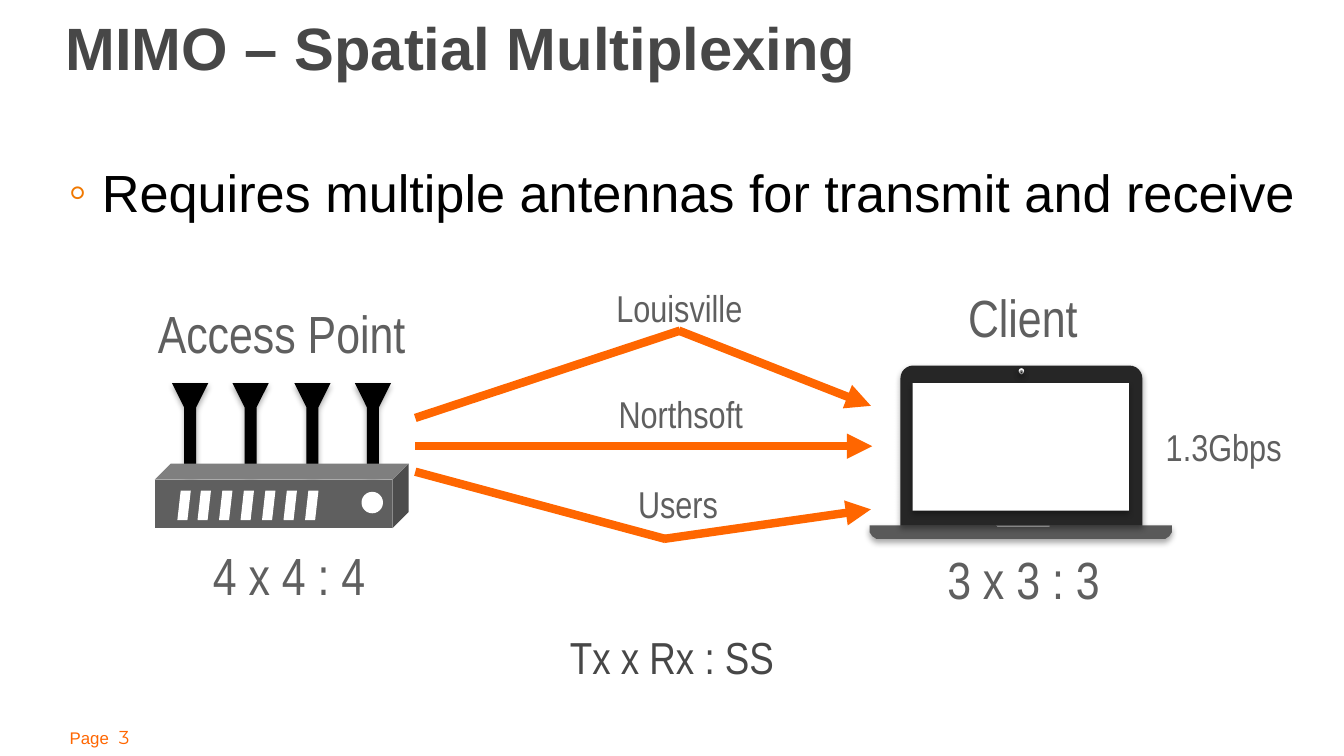
"""Build the MIMO spatial multiplexing slide."""
from lxml import etree
from pptx import Presentation
from pptx.dml.color import RGBColor
from pptx.enum.shapes import MSO_CONNECTOR, MSO_SHAPE
from pptx.enum.text import PP_ALIGN
from pptx.oxml.ns import qn
from pptx.util import Pt

PX = 9144
STRAIGHT = MSO_CONNECTOR.STRAIGHT
RECTANGLE, ELLIPSE = MSO_SHAPE.RECTANGLE, MSO_SHAPE.OVAL
CUBE, PARALLELOGRAM = MSO_SHAPE.CUBE, MSO_SHAPE.PARALLELOGRAM
ROUNDED_TOP = MSO_SHAPE.ROUND_2_SAME_RECTANGLE
LEFT, CENTER = PP_ALIGN.LEFT, PP_ALIGN.CENTER
COLORS = {
    "title": "474747", "label": "5F5F5F", "orange": "FF6600", "bullet": "F07800",
    "black": "000000", "white": "FFFFFF", "lid": "262626", "base": "595959", "ring": "808080",
}
COLORS = {name: RGBColor.from_string(value) for name, value in COLORS.items()}

deck = Presentation()
deck.slide_width = 1000 * PX
deck.slide_height = deck.slide_width * 9 // 16
slide = deck.slides.add_slide(deck.slide_layouts[6])
shapes = slide.shapes


def paint(shape, color, shadow=False):
    shape.fill.solid()
    shape.fill.fore_color.rgb = COLORS[color]
    shape.line.fill.background()
    shape.shadow.inherit = False
    if shadow:
        effects = shape._element.spPr.find(qn("a:effectLst"))
        outer = etree.SubElement(effects, qn("a:outerShdw"), blurRad="40000", dist="23000",
                                 dir="5400000", rotWithShape="0")
        tint = etree.SubElement(outer, qn("a:srgbClr"), val="000000")
        etree.SubElement(tint, qn("a:alpha"), val="35000")


def write(text, left, top, width, height, size, color, font="Arial Narrow", align=CENTER):
    box = shapes.add_textbox(left * PX, top * PX, width * PX, height * PX)
    box.text_frame.word_wrap = True
    para = box.text_frame.paragraphs[0]
    para.text = text
    para.alignment = align
    para.font.size = Pt(size)
    para.font.name = font
    para.font.color.rgb = COLORS[color]
    return para


page = write("Page", 42, 535, 76, 27, 9, "orange", "Arial", LEFT)
gap = page.add_run()
gap.text = " "
gap.font._element.set("spc", "280")
number = page.add_run()
number.text = "3"
number.font.size = Pt(10)
number.font.name = "Montserrat"

title = write("MIMO – Spatial Multiplexing", 39, 3, 892, 56, 32, "title", "Arial", LEFT)
title.font.bold = True

antenna = [(0, 0), (27, 0), (18, 18), (18, 68), (17, 69), (10, 69), (9, 68), (9, 18)]
laptop_base = [(647, 391), (741, 391), (742, 392), (781, 392), (781, 391), (872, 391),
               (872, 396), (870, 399), (867, 401), (863, 401), (657, 401), (652, 401),
               (649, 399), (647, 396)]
antennas = [[(128 + 91 * index // 2 + x, 285 + y) for x, y in antenna] for index in range(4)]
outlines = [(outline, "black") for outline in antennas] + [(laptop_base, "base")]
for outline, color in outlines:
    builder = shapes.build_freeform(*outline[0], scale=PX)
    builder.add_line_segments(outline[1:])
    paint(builder.convert_to_shape(), color, True)

slots = [(PARALLELOGRAM, 132 + 95 * index // 6, 365, 10, 22, "white", False)
         for index in range(7)]
for kind, left, top, width, height, color, shadow in [
    (CUBE, 115, 345, 189, 48, "label", False),
    *slots,
    (ELLIPSE, 269, 366, 16, 16, "white", False),
    (ROUNDED_TOP, 670, 272, 180, 119, "lid", True),
    (RECTANGLE, 679, 285, 161, 95, "white", True),
    (ELLIPSE, 758, 274, 4, 4, "white", True),
    (ELLIPSE, 759, 276, 2, 2, "black", True),
]:
    part = shapes.add_shape(kind, left * PX, top * PX, width * PX, height * PX)
    paint(part, color, shadow)
    if kind == ROUNDED_TOP:
        part.adjustments[0] = 0.08
camera = part
camera.line.color.rgb = COLORS["ring"]
camera.line.width = Pt(0.75)

for start_x, start_y, end_x, end_y, arrow in [
    (309, 311, 506, 246, False), (505, 246, 648, 302, True),
    (309, 351, 495, 401, False), (494, 401, 648, 379, True),
    (309, 332, 649, 332, True),
]:
    stream = shapes.add_connector(STRAIGHT, start_x * PX, start_y * PX, end_x * PX, end_y * PX)
    stream.line.color.rgb = COLORS["orange"]
    stream.line.width = Pt(4.5)
    if arrow:
        outline = stream._element.spPr.find(qn("a:ln"))
        etree.SubElement(outline, qn("a:tailEnd"), type="triangle")
    etree.SubElement(stream._element.spPr, qn("a:effectLst"))

for text, left, top, width, height, size, color in [
    ("Client", 655, 207, 212, 57, 28, "label"),
    ("Access Point", 78, 219, 263, 57, 28, "label"),
    ("Tx x Rx : SS", 377, 464, 246, 50, 24, "title"),
    ("4 x 4 : 4", 134, 399, 162, 57, 28, "label"),
    ("3 x 3 : 3", 681, 402, 161, 57, 28, "label"),
    ("1.3Gbps", 840, 311, 141, 44, 20, "label"),
    ("Louisville", 435, 207, 141, 44, 20, "label"),
    ("Northsoft", 436, 286, 141, 44, 20, "label"),
    ("Users", 434, 353, 141, 44, 20, "label"),
]:
    write(text, left, top, width, height, size, color)

body = write("Requires multiple antennas for transmit and receive",
             41, 117, 940, 58, 28, "black", "Arial", LEFT)
body.line_spacing = Pt(31.6)
properties = body._p.get_or_add_pPr()
properties.set("marL", str(25 * PX))
properties.set("indent", str(-25 * PX))
bullet_color = etree.Element(qn("a:buClr"))
etree.SubElement(bullet_color, qn("a:srgbClr"), val=str(COLORS["bullet"]))
bullet_font = etree.Element(qn("a:buFont"), typeface="Arial")
bullet = etree.Element(qn("a:buChar"), char="◦")
run_defaults = properties.find(qn("a:defRPr"))
for element in (bullet_color, bullet_font, bullet):
    run_defaults.addprevious(element)

deck.save("out.pptx")
